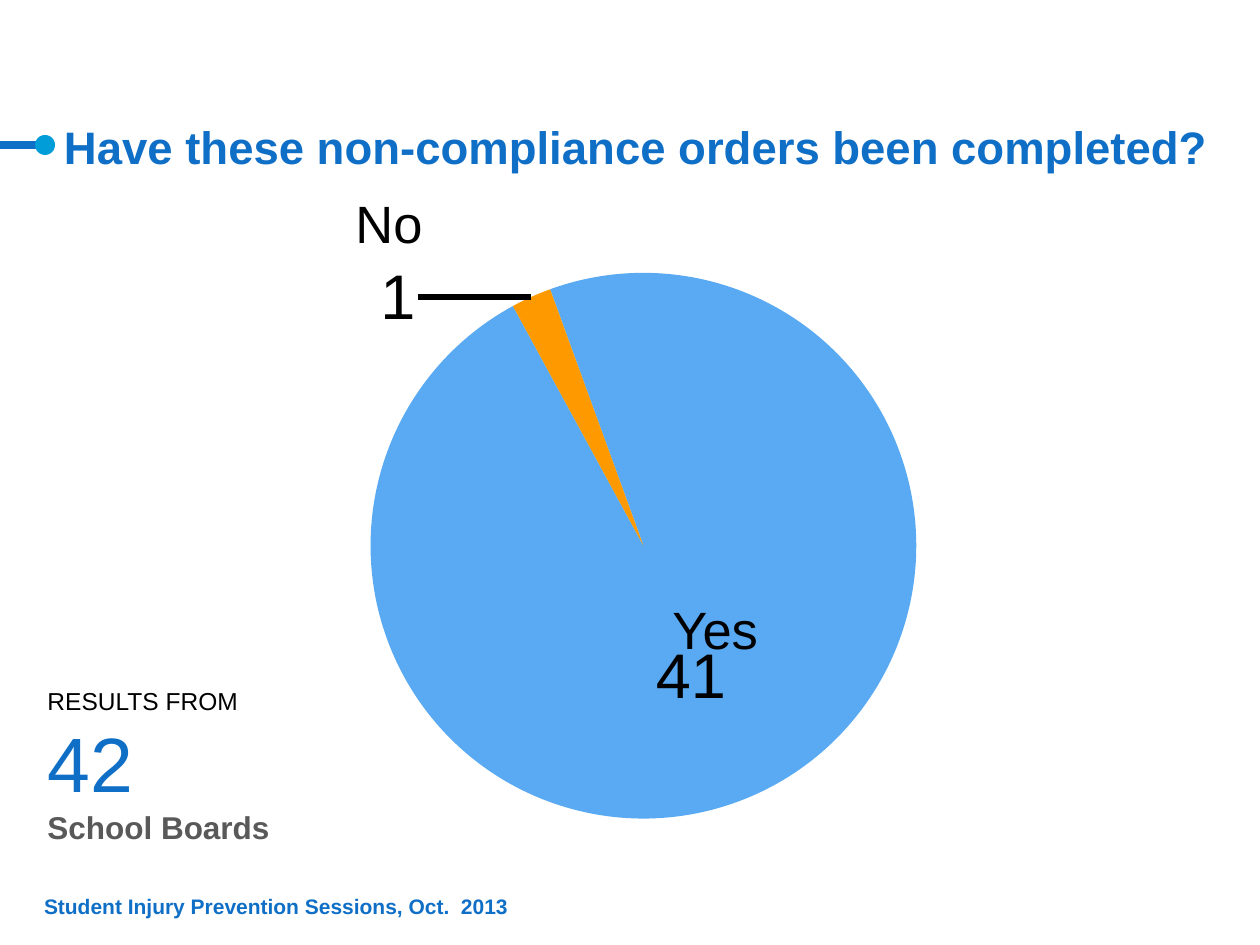
from lxml import etree
from pptx import Presentation
from pptx import util as u
from pptx.chart.data import CategoryChartData
from pptx.dml.color import RGBColor
from pptx.enum import chart as ch, shapes, text
from pptx.oxml import parse_xml
from pptx.oxml.ns import nsdecls, qn

BLUE = RGBColor(0x0F, 0x6F, 0xC6)
CYAN = RGBColor(0x00, 0x9D, 0xD9)
SKY = RGBColor(0x59, 0xAA, 0xF2)
ORANGE = RGBColor(0xFF, 0x99, 0x00)
GREY = RGBColor(0x59, 0x59, 0x59)
BLACK = RGBColor(0, 0, 0)
SCALE = 914400 / 126


def px(*lengths):
    return [u.Emu(round(n * SCALE)) for n in lengths]


def manual_layout(**values):
    tags = "".join(f'<c:{k} val="{v}"/>' for k, v in values.items())
    return parse_xml(f'<c:layout {nsdecls("c")}><c:manualLayout>{tags}'
                     '</c:manualLayout></c:layout>')


prs = Presentation()
prs.slide_width, prs.slide_height = px(1260, 945)
s = prs.slides.add_slide(prs.slide_layouts[5])

title = s.shapes.title
title.left, title.top, title.width, title.height = px(64, 16, 1250, 158)
tf = title.text_frame
tf.text = "Have these non-compliance orders been completed?"
tf.word_wrap = True
tf.auto_size = text.MSO_AUTO_SIZE.NONE
tf.vertical_anchor = text.MSO_ANCHOR.BOTTOM
tf.margin_left = tf.margin_right = tf.margin_bottom = 0
p = tf.paragraphs[0]
p.alignment = text.PP_ALIGN.LEFT
p.line_spacing = u.Pt(28)
r = p.runs[0]
r.font.name, r.font.size, r.font.bold = "Arial", u.Pt(26), True
r.font.color.rgb = BLUE

data = CategoryChartData()
data.categories = ["1", "2"]
data.add_series("Series 1", [41, 1])
chart = s.shapes.add_chart(ch.XL_CHART_TYPE.PIE, *px(210, 193, 867, 707), data).chart
chart.has_legend = chart.has_title = False
chart.font.name, chart.font.size = "Vollkorn", u.Pt(18)
chart.font.color.rgb = BLACK

plot = chart.plots[0]
plot.vary_by_categories = False
pie = plot._element
angle = pie.find(qn("c:firstSliceAng"))
if angle is None:
    angle = etree.SubElement(pie, qn("c:firstSliceAng"))
angle.set("val", "340")

area = chart._chartSpace.chart.plotArea
for old in area.findall(qn("c:layout")):
    area.remove(old)
area.insert(0, manual_layout(layoutTarget="inner", xMode="edge", yMode="edge",
                             x=0.185, y=0.113, w=0.63, h=0.772))

series = plot.series[0]
labels = series.data_labels
labels.show_value = True
labels.font.name, labels.font.size = "Arial", u.Pt(36)
for leader in labels._element.findall(qn("c:showLeaderLines")):
    leader.set("val", "0")
for i, (color, position) in enumerate([
        (SKY, ch.XL_LABEL_POSITION.CENTER),
        (ORANGE, ch.XL_LABEL_POSITION.OUTSIDE_END)]):
    point = series.points[i]
    point.format.fill.solid()
    point.format.fill.fore_color.rgb = color
    label = point.data_label
    label.position = position
    label.font.name, label.font.size = "Arial", u.Pt(36)
    label.font.color.rgb = BLACK
for dlbl, x, y in zip(labels._element.findall(qn("c:dLbl")), (-0.01, -0.13), (0.01, 0.06)):
    dlbl.insert(1, manual_layout(x=x, y=y))

for begin, end, color, width in [((0, 145), (44, 145), BLUE, 4.75),
                                 ((418, 297), (531, 297), BLACK, 3)]:
    line = s.shapes.add_connector(shapes.MSO_CONNECTOR.STRAIGHT, *px(*begin, *end))
    line.line.color.rgb = color
    line.line.width = u.Pt(width)
    etree.SubElement(line._element.spPr, qn("a:effectLst"))

dot = s.shapes.add_shape(shapes.MSO_SHAPE.OVAL, *px(35, 135, 20, 20))
dot.shadow.inherit = False
dot.fill.solid()
dot.fill.fore_color.rgb = CYAN
dot.line.fill.background()

for box, paragraphs in [
    ((660, 591, 171, 77), [("Yes", 30, BLACK, False)]),
    ((343, 185, 110, 77), [("No", 30, BLACK, False)]),
    ((35, 680, 268, 174), [("RESULTS FROM", 14, BLACK, False),
                           ("42", 44, BLUE, False),
                           ("School Boards", 18, GREY, True)]),
    ((44, 886, 498, 33), [("Student Injury Prevention Sessions, Oct.  2013", 12, BLUE, True)]),
]:
    sp = s.shapes.add_textbox(*px(*box))
    tf = sp.text_frame
    tf.word_wrap = True
    for i, (words, size, color, bold) in enumerate(paragraphs):
        p = tf.add_paragraph() if i else tf.paragraphs[0]
        p.text = words
        r = p.runs[0]
        r.font.name, r.font.size, r.font.bold = "Arial", u.Pt(size), bold
        r.font.color.rgb = color

tf.vertical_anchor = text.MSO_ANCHOR.BOTTOM
tf.margin_left = tf.margin_top = tf.margin_right = tf.margin_bottom = 0

prs.save("out.pptx")
